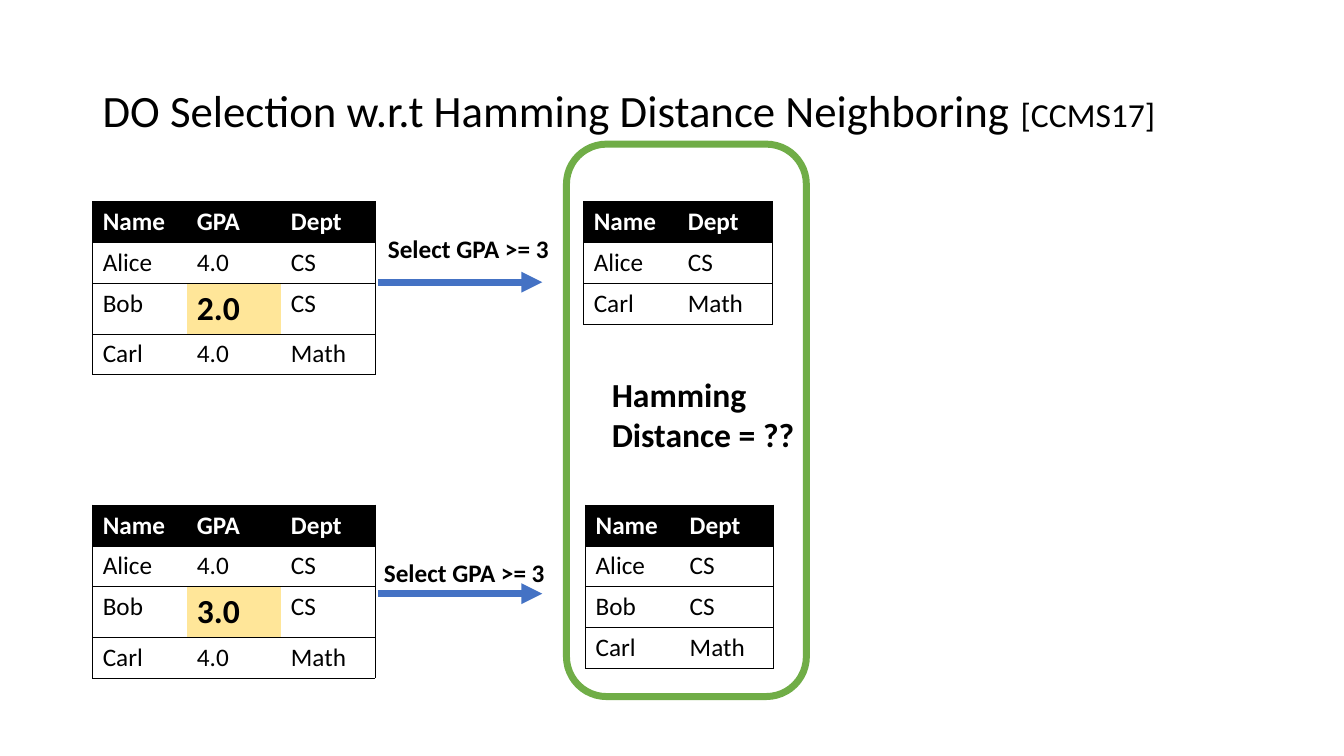
from dataclasses import dataclass

from lxml import etree
from pptx import Presentation, util as u
from pptx.dml.color import RGBColor
from pptx.enum import shapes, text
from pptx.oxml import ns


@dataclass(frozen=True)
class Theme:
    font: str = "Calibri"
    ink: str = "000000"
    paper: str = "FFFFFF"
    mark: str = "FFE699"
    arrow: str = "4472C4"
    frame: str = "70AD47"
    title: int = 32
    large: int = 24
    body: int = 18
    rule: float = 0.5
    stroke: int = 5


@dataclass(frozen=True)
class Box:
    left: float
    top: float
    width: float
    height: float


@dataclass(frozen=True)
class Run:
    words: str
    size: int
    bold: bool = False
    color: str = Theme.ink


@dataclass(frozen=True)
class Grid:
    left: float
    top: float
    rows: list[list[str]]
    mark: tuple[int, int] | None = None


@dataclass(frozen=True)
class Step:
    label: Box
    level: float


look = Theme()
deck = Presentation()
deck.slide_width = u.Inches(13.33)
deck.slide_height = u.Inches(7.5)
slide = deck.slides.add_slide(deck.slide_layouts[6])

CELL_W, CELL_H = 7, 5.41
LEFT, RIGHT = 6.9, 43.43
UPPER, LOWER = 26.67, 66.8
START, END = 28.13, 40.35


def across(share: float) -> int:
    return round(deck.slide_width * share / 100)


def down(share: float) -> int:
    return round(deck.slide_height * share / 100)


def place(box: Box) -> tuple[int, int, int, int]:
    return across(box.left), down(box.top), across(box.width), down(box.height)


def tint(code: str) -> RGBColor:
    return RGBColor.from_string(code)


def add_run(para, run: Run) -> None:
    part = para.add_run()
    part.text = run.words
    font = part.font
    font.name, font.size, font.bold = look.font, u.Pt(run.size), run.bold
    font.color.rgb = tint(run.color)


def add_text(box: Box, lines: list[list[Run]], wrap: bool = False):
    frame = slide.shapes.add_textbox(*place(box)).text_frame
    frame.word_wrap = wrap
    if not wrap:
        frame.auto_size = text.MSO_AUTO_SIZE.SHAPE_TO_FIT_TEXT
    for i, line in enumerate(lines):
        para = frame.add_paragraph() if i else frame.paragraphs[0]
        for run in line:
            add_run(para, run)
    return frame


def add_edges(cell, first: bool, last: bool) -> None:
    props = cell._tc.get_or_add_tcPr()
    for side, shown in (("L", first), ("R", last), ("T", True), ("B", True)):
        edge = etree.SubElement(props, ns.qn(f"a:ln{side}"), w=str(u.Pt(look.rule)))
        if shown:
            fill = etree.SubElement(edge, ns.qn("a:solidFill"))
            etree.SubElement(fill, ns.qn("a:srgbClr"), val=look.ink)
        else:
            etree.SubElement(edge, ns.qn("a:noFill"))


def add_grid(grid: Grid) -> None:
    high, wide = len(grid.rows), len(grid.rows[0])
    box = Box(grid.left, grid.top, wide * CELL_W, high * CELL_H)
    table = slide.shapes.add_table(high, wide, *place(box)).table
    table.first_row = table.horz_banding = False
    for r, row in enumerate(grid.rows):
        for c, words in enumerate(row):
            cell = table.cell(r, c)
            head, mark = r == 0, (r, c) == grid.mark
            add_edges(cell, c == 0, c == wide - 1)
            if head or mark:
                cell.fill.solid()
                cell.fill.fore_color.rgb = tint(look.ink if head else look.mark)
            else:
                cell.fill.background()
            size = look.large if mark else look.body
            color = look.paper if head else look.ink
            add_run(cell.text_frame.paragraphs[0], Run(words, size, head or mark, color))


def add_step(step: Step) -> None:
    y = down(step.level)
    line = slide.shapes.add_connector(
        shapes.MSO_CONNECTOR.STRAIGHT, across(START), y, across(END), y)
    line.line.color.rgb = tint(look.arrow)
    line.line.width = u.Pt(look.stroke)
    etree.SubElement(line.line._get_or_add_ln(), ns.qn("a:tailEnd"), type="triangle")
    etree.SubElement(line._element.spPr, ns.qn("a:effectLst"))
    add_text(step.label, [[Run("Select GPA >= 3", look.body, True)]])


def add_frame(box: Box) -> None:
    shape = slide.shapes.add_shape(shapes.MSO_SHAPE.ROUNDED_RECTANGLE, *place(box))
    shape.shadow.inherit = False
    shape.fill.background()
    shape.line.color.rgb = tint(look.frame)
    shape.line.width = u.Pt(look.stroke)


def source(top: float, grade: str) -> Grid:
    rows = [["Name", "GPA", "Dept"], ["Alice", "4.0", "CS"],
            ["Bob", grade, "CS"], ["Carl", "4.0", "Math"]]
    return Grid(LEFT, top, rows, (2, 1))


def main() -> None:
    title = add_text(Box(LEFT, 5.33, 86.25, 19.33), [[
        Run("DO Selection w.r.t Hamming Distance Neighboring ", look.title),
        Run("[CCMS17]", look.large)]], wrap=True)
    title.vertical_anchor = text.MSO_ANCHOR.MIDDLE
    title.paragraphs[0].line_spacing = 0.9

    head, alice, bob, carl = ["Name", "Dept"], ["Alice", "CS"], ["Bob", "CS"], ["Carl", "Math"]
    for grid in (
        source(UPPER, "2.0"),
        source(LOWER, "3.0"),
        Grid(RIGHT, UPPER, [head, alice, carl]),
        Grid(RIGHT + 0.14, LOWER, [head, alice, bob, carl]),
    ):
        add_grid(grid)

    for step in (
        Step(Box(START, 30.27, 14.03, 5.39), 37.33),
        Step(Box(27.83, 73.07, 14.03, 5.39), 78.53),
    ):
        add_step(step)

    add_frame(Box(42.15, 19.07, 17.85, 73.07))
    add_text(Box(44.78, 48.8, 15.23, 12.13), [
        [Run(words, look.large, True)] for words in ("Hamming", "Distance = ??")])
    deck.save("out.pptx")


if __name__ == "__main__":
    main()
